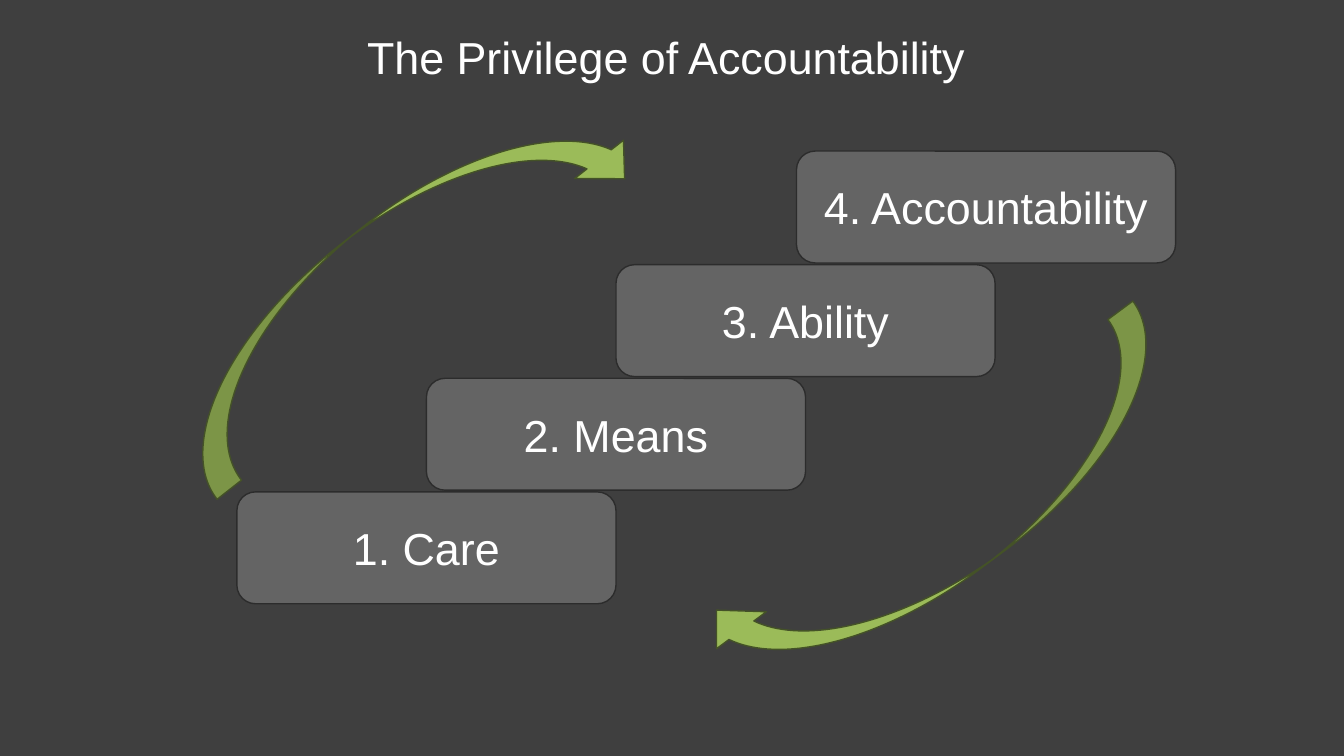
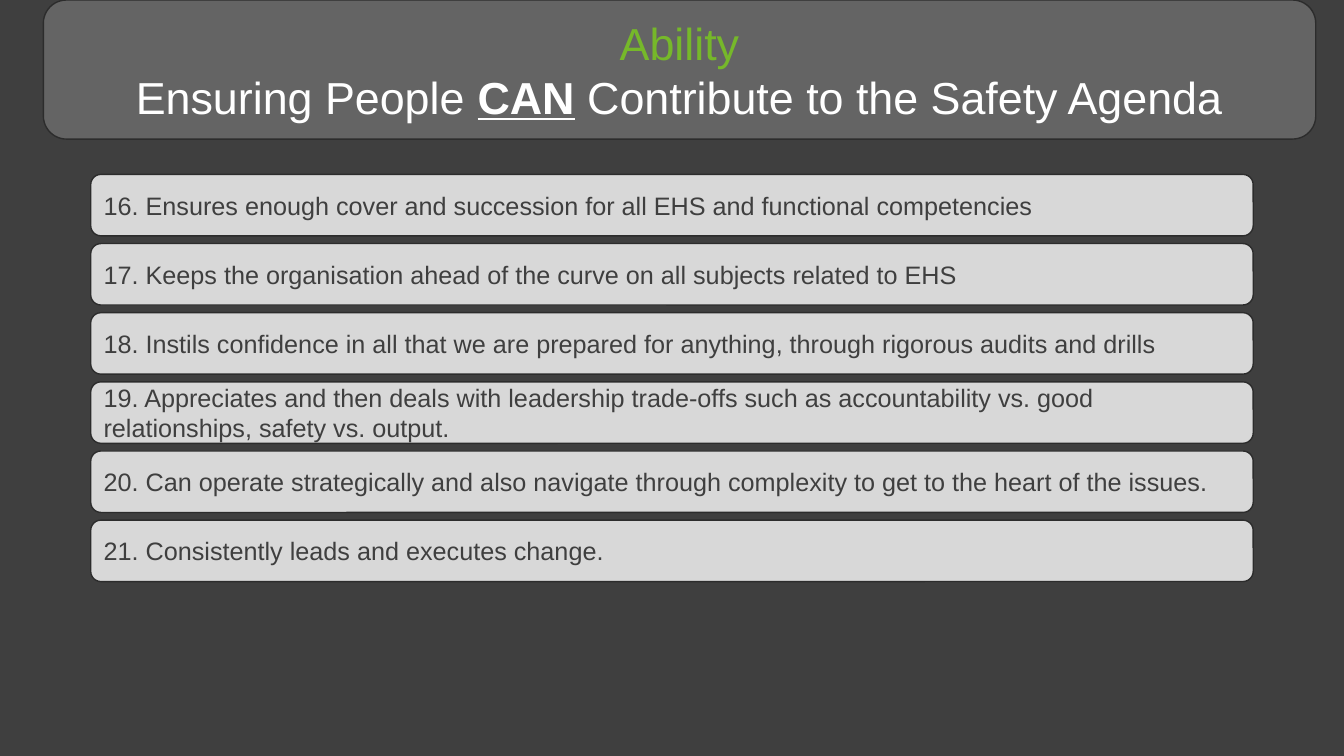
from pptx import Presentation
from pptx.dml.color import RGBColor
from pptx.enum import shapes, text
from pptx.util import Inches, Pt

FONT = "Arial"
CHARCOAL = RGBColor(0x3F, 0x3F, 0x3F)
GREY = RGBColor(0x64, 0x64, 0x64)
PALE = RGBColor(0xD8, 0xD8, 0xD8)
EDGE = RGBColor(0x2C, 0x2C, 0x2C)
WHITE = RGBColor(0xFF, 0xFF, 0xFF)
LEAF = RGBColor(0x76, 0xB8, 0x2A)
ARROW = RGBColor(0x9B, 0xBB, 0x59)
ARROW_EDGE = RGBColor(0x44, 0x52, 0x27)

LEFT, CENTER = text.PP_ALIGN.LEFT, text.PP_ALIGN.CENTER
HEADING_SIZE, BAR_SIZE = 32, 18

STEPS = [
    ("1. Care", 2.35),
    ("2. Means", 4.23),
    ("3. Ability", 6.11),
    ("4. Accountability", 7.9),
]
ABILITIES = [
    "16. Ensures enough cover and succession for all EHS and functional competencies",
    "17. Keeps the organisation ahead of the curve on all subjects related to EHS",
    "18. Instils confidence in all that we are prepared for anything, through rigorous audits and drills",
    "19. Appreciates and then deals with leadership trade-offs such as accountability vs. good "
    "relationships, safety vs. output.",
    "20. Can operate strategically and also navigate through complexity to get to the heart of the issues.",
    "21. Consistently leads and executes change.",
]


def add_span(para, words, size, color, strong=False):
    span = para.add_run()
    span.text = words
    span.font.name = FONT
    span.font.size = Pt(size)
    span.font.color.rgb = color
    if strong:
        span.font.bold = True
        span.font.underline = True


def add_figure(page, kind, box, fill, edge):
    figure = page.shapes.add_shape(kind, *map(Inches, box))
    figure.shadow.inherit = False
    figure.fill.solid()
    figure.fill.fore_color.rgb = fill
    figure.line.color.rgb = edge
    figure.line.width = Pt(1)
    return figure


def add_panel(page, box, fill):
    return add_figure(page, shapes.MSO_SHAPE.ROUNDED_RECTANGLE, box, fill, EDGE)


def add_label(page, box, fill, words, size, color, align):
    panel = add_panel(page, box, fill)
    frame = panel.text_frame
    frame.vertical_anchor = text.MSO_ANCHOR.MIDDLE
    para = frame.paragraphs[0]
    para.alignment = align
    add_span(para, words, size, color)


def place_title(page, box, lines, align):
    title = page.shapes.title
    title.left, title.top, title.width, title.height = map(Inches, box)
    frame = title.text_frame
    frame.word_wrap = True
    frame.auto_size = text.MSO_AUTO_SIZE.NONE
    frame.vertical_anchor = text.MSO_ANCHOR.MIDDLE
    for number, spans in enumerate(lines):
        para = frame.add_paragraph() if number else frame.paragraphs[0]
        para.alignment = align
        for words, color, strong in spans:
            add_span(para, words, HEADING_SIZE, color, strong)


def add_title_band(page, box, lines):
    band = add_panel(page, box, GREY)
    place_title(page, box, lines, CENTER)
    page.shapes.title.element.addprevious(band.element)


def add_staircase(page, bottom_top, rise):
    for number, (words, left) in enumerate(STEPS):
        box = (left, bottom_top - number * rise, 3.76, 1.11)
        add_label(page, box, GREY, words, HEADING_SIZE, WHITE, CENTER)


def add_curved_arrow(page, left, top, angle):
    box = (left, top, 1.23, 5.45)
    arrow = add_figure(page, shapes.MSO_SHAPE.CURVED_RIGHT_ARROW, box, ARROW, ARROW_EDGE)
    arrow.rotation = angle
    arrow.element.spPr.xfrm.set("flipH", "1")


def add_bars(page, box, entries, bar_height):
    left, top, width, height = box
    pitch = (height - bar_height) / (len(entries) - 1)
    for number, words in enumerate(entries):
        bar = (left, top + number * pitch, width, bar_height)
        add_label(page, bar, PALE, words, BAR_SIZE, CHARCOAL, LEFT)


def build_steps_page(page):
    heading = [[("The Privilege of Accountability", WHITE, False)]]
    place_title(page, (3.54, 0.24, 6.25, 0.64), heading, LEFT)
    add_staircase(page, 4.88, 1.127)
    add_curved_arrow(page, 3.3, 0.06, 231.8)
    add_curved_arrow(page, 8.8, 2.38, 53.4)


def build_ability_page(page):
    add_title_band(page, (0.43, 0, 12.62, 1.38), [
        [("Ability", LEAF, False)],
        [
            ("Ensuring People ", WHITE, False),
            ("CAN", WHITE, True),
            (" Contribute to the Safety Agenda", WHITE, False),
        ],
    ])
    add_bars(page, (0.9, 1.73, 11.53, 4.04), ABILITIES, 0.61)


def main():
    deck = Presentation()
    deck.slide_width, deck.slide_height = Inches(13.33), Inches(7.5)
    backdrop = deck.slide_master.background.fill
    backdrop.solid()
    backdrop.fore_color.rgb = CHARCOAL
    title_only = deck.slide_layouts.get_by_name("Title Only")
    for build in (build_steps_page, build_ability_page):
        build(deck.slides.add_slide(title_only))
    deck.save("out.pptx")


if __name__ == "__main__":
    main()
